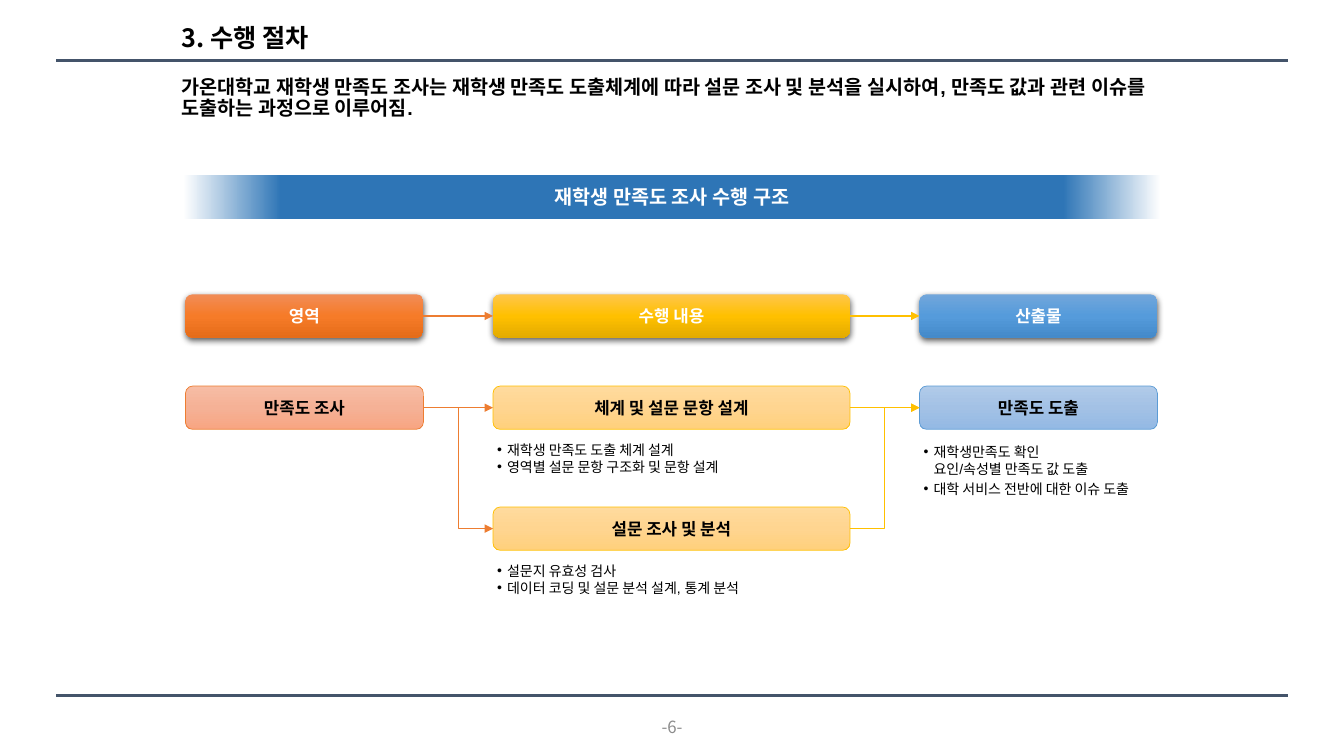
from dataclasses import dataclass
from itertools import accumulate

from lxml import etree
from pptx import Presentation
from pptx import util as u
from pptx.dml import color
from pptx.enum import shapes, text
from pptx.oxml import ns, parse_xml


@dataclass(frozen=True)
class Theme:
    """Colours, fonts and type sizes of the slide."""
    rule: str = "44546A"
    black: str = "000000"
    white: str = "FFFFFF"
    grey: str = "8C8C8C"
    banner: tuple = ((0, "FFFFFF"), (10, "2E75B6"), (90, "2E75B6"), (100, "FFFFFF"))
    lines: tuple = ("ED7D31", "FFC000", "5B9BD5")
    strong: tuple = (("F18C57", "F67B28", "E56C19"), ("FFC64B", "FFC000", "E3AB00"),
                     ("71A6DB", "559BDB", "448ACA"))
    pale: tuple = (("F7BDA5", "F5B196", "F8A582"), ("FFDB9E", "FFD590", "FFD07C"),
                   ("B1CBE9", "A3C1E5", "93B9E4"))
    hangul: str = "Noto Sans CJK KR"
    latin: str = "Arial"
    title_size: float = 18
    lead_size: float = 14
    box_size: float = 12
    note_size: float = 10


THEME = Theme()
WIDTH, HEIGHT = 13.33, 7.5
UNIT, GAP, LEFT = 1.18, 0.69, 1.84
SPANS = (2 * UNIT, 3 * UNIT, 2 * UNIT)
COLUMNS = tuple(accumulate((span + GAP for span in SPANS[:-1]), initial=LEFT))
ROWS = (2.92, 3.83, 5.03)
BOX_HEIGHT = 0.43
NOTE_INSETS = (0.04, 0.12, 0.04, 0.04)


def rgb(value):
    """Return a colour object for a hex value."""
    return color.RGBColor.from_string(value)


def drawing_element(tag, body="", **attributes):
    """Return a DrawingML element."""
    pairs = " ".join(f'{name}="{value}"' for name, value in attributes.items())
    return parse_xml(f'<a:{tag} {ns.nsdecls("a")} {pairs}>{body}</a:{tag}>')


def write(shape, *paragraphs, size, font=THEME.hangul, ink=THEME.black, bold=False,
          align=text.PP_ALIGN.LEFT, anchor=text.MSO_ANCHOR.TOP, wrap=True,
          insets=(0.1, 0.05, 0.1, 0.05), bullet=False, before=0, spacing=1.0):
    """Fill a shape with formatted paragraphs."""
    frame = shape.text_frame
    frame.word_wrap, frame.vertical_anchor = wrap, anchor
    (frame.margin_left, frame.margin_top,
     frame.margin_right, frame.margin_bottom) = map(u.Inches, insets)
    for index, wording in enumerate(paragraphs):
        paragraph = frame.add_paragraph() if index else frame.paragraphs[0]
        paragraph.text = wording
        paragraph.alignment = align
        paragraph.line_spacing = spacing
        paragraph.space_before = u.Pt(before)
        for run in paragraph.runs:
            run.font.size, run.font.bold, run.font.name = u.Pt(size), bold, font
            run.font.color.rgb = rgb(ink)
            run.font._element.find(ns.qn("a:latin")).addnext(
                drawing_element("ea", typeface=THEME.hangul))
        if bullet:
            properties = paragraph._p.get_or_add_pPr()
            properties.set("marL", str(u.Inches(0.1)))
            properties.set("indent", str(-u.Inches(0.1)))
            properties.append(drawing_element("buFont", typeface=THEME.latin))
            properties.append(drawing_element("buChar", char="•"))


def add_label(slide, place, *paragraphs, **style):
    """Add a text box at left, top, width, height."""
    shape = slide.shapes.add_textbox(*map(u.Inches, place))
    write(shape, *paragraphs, **style)


def add_panel(slide, kind, place, stops, angle, line=None, raised=False):
    """Add a shape with a gradient fill and an optional line or shadow."""
    shape = slide.shapes.add_shape(kind, *map(u.Inches, place))
    shape.shadow.inherit = False
    marks = "".join(f'<a:gs pos="{share * 1000}"><a:srgbClr val="{value}"/></a:gs>'
                    for share, value in stops)
    body = f'<a:gsLst>{marks}</a:gsLst><a:lin ang="{angle * 60000}" scaled="0"/>'
    properties = shape._element.spPr
    properties.find(ns.qn("a:prstGeom")).addnext(
        drawing_element("gradFill", body, rotWithShape=1))
    if line:
        shape.line.color.rgb, shape.line.width = rgb(line), u.Pt(0.5)
    else:
        shape.line.fill.background()
    if raised:
        shade = f'<a:srgbClr val="{THEME.black}"><a:alpha val="63000"/></a:srgbClr>'
        properties.find(ns.qn("a:effectLst")).append(drawing_element(
            "outerShdw", shade, blurRad=u.Pt(4.5), dist=u.Pt(1.5),
            dir=90 * 60000, algn="ctr", rotWithShape=0))
    return shape


def add_box(slide, column, row, wording):
    """Add a rounded box at a grid place; the first row holds headings."""
    heading = row == 0
    colours = (THEME.strong if heading else THEME.pale)[column]
    place = (COLUMNS[column], ROWS[row], SPANS[column], BOX_HEIGHT)
    shape = add_panel(slide, shapes.MSO_SHAPE.ROUNDED_RECTANGLE, place,
                      tuple(zip((0, 50, 100), colours)), 90,
                      line=None if heading else THEME.lines[column], raised=heading)
    write(shape, wording, size=THEME.box_size, bold=True,
          ink=THEME.white if heading else THEME.black,
          align=text.PP_ALIGN.CENTER, anchor=text.MSO_ANCHOR.MIDDLE)
    return shape


def add_line(slide, kind, ink, width, ends=(0, 0, 0, 0)):
    """Add a plain connector without shadow."""
    connector = slide.shapes.add_connector(kind, *map(u.Inches, ends))
    connector.line.color.rgb, connector.line.width = rgb(ink), u.Pt(width)
    etree.SubElement(connector._element.spPr, ns.qn("a:effectLst"))
    return connector


def add_arrow(slide, start, finish, ink):
    """Join the right side of one box to the left side of another."""
    kinds = shapes.MSO_CONNECTOR
    kind = kinds.STRAIGHT if start.top == finish.top else kinds.ELBOW
    connector = add_line(slide, kind, ink, 1)
    connector.begin_connect(start, 3)
    connector.end_connect(finish, 1)
    connector.line._get_or_add_ln().append(drawing_element("tailEnd", type="triangle"))


def add_notes(slide, column, top, height, *paragraphs, insets=NOTE_INSETS, before=0):
    """Add a bulleted list under a box."""
    add_label(slide, (COLUMNS[column], top, SPANS[column], height), *paragraphs,
              size=THEME.note_size, font=THEME.latin, bullet=True,
              insets=insets, before=before)


def add_frame(slide):
    """Add the rules, title, lead text, page number and banner."""
    middle, centre = text.MSO_ANCHOR.MIDDLE, text.PP_ALIGN.CENTER
    for level in (0.08 * HEIGHT, 0.92 * HEIGHT):
        add_line(slide, shapes.MSO_CONNECTOR.STRAIGHT, THEME.rule, 2,
                 (0.56, level, WIDTH - 0.56, level))
    add_label(slide, (1.7, 0.21, 1.6, 0.37), "3. 수행 절차", size=THEME.title_size,
              bold=True, anchor=middle, wrap=False, spacing=0.9)
    add_label(slide, (1.7, 0.72, 9.92, 0.53),
              "가온대학교 재학생 만족도 조사는 재학생 만족도 도출체계에 따라 설문 조사 및 분석을 "
              "실시하여, 만족도 값과 관련 이슈를 도출하는 과정으로 이루어짐.",
              size=THEME.lead_size, font=THEME.latin, bold=True, spacing=0.9)
    add_label(slide, (6.39, 7.06, 0.55, 0.3), "-6-", size=THEME.box_size,
              ink=THEME.grey, align=centre, anchor=middle, wrap=False)
    banner = add_panel(slide, shapes.MSO_SHAPE.RECTANGLE, (1.82, 1.74, 9.69, 0.43),
                       THEME.banner, 0)
    write(banner, "재학생 만족도 조사 수행 구조", size=THEME.lead_size, font=THEME.latin,
          ink=THEME.white, bold=True, align=centre, anchor=middle)


def main():
    """Build the slide and save it."""
    presentation = Presentation()
    presentation.slide_width, presentation.slide_height = u.Inches(WIDTH), u.Inches(HEIGHT)
    slide = presentation.slides.add_slide(presentation.slide_layouts[6])
    add_frame(slide)

    area, content, product = (add_box(slide, column, 0, wording) for column, wording
                              in enumerate(("영역", "수행 내용", "산출물")))
    survey, design, result = (add_box(slide, column, 1, wording) for column, wording
                              in enumerate(("만족도 조사", "체계 및 설문 문항 설계", "만족도 도출")))
    analysis = add_box(slide, 1, 2, "설문 조사 및 분석")

    add_notes(slide, 1, ROWS[1] + BOX_HEIGHT, 0.53,
              "재학생 만족도 도출 체계 설계", "영역별 설문 문항 구조화 및 문항 설계")
    add_notes(slide, 1, ROWS[2] + BOX_HEIGHT, 0.53,
              "설문지 유효성 검사", "데이터 코딩 및 설문 분석 설계, 통계 분석")
    add_notes(slide, 2, ROWS[1] + BOX_HEIGHT + 0.1, 0.79,
              "재학생만족도 확인\v요인/속성별 만족도 값 도출", "대학 서비스 전반에 대한 이슈 도출",
              insets=(0.04,) * 4, before=2.5)

    orange, yellow = THEME.lines[:2]
    for start, finish, ink in ((area, content, orange), (content, product, yellow),
                               (survey, design, orange), (survey, analysis, orange),
                               (design, result, yellow), (analysis, result, yellow)):
        add_arrow(slide, start, finish, ink)
    presentation.save("out.pptx")


if __name__ == "__main__":
    main()
